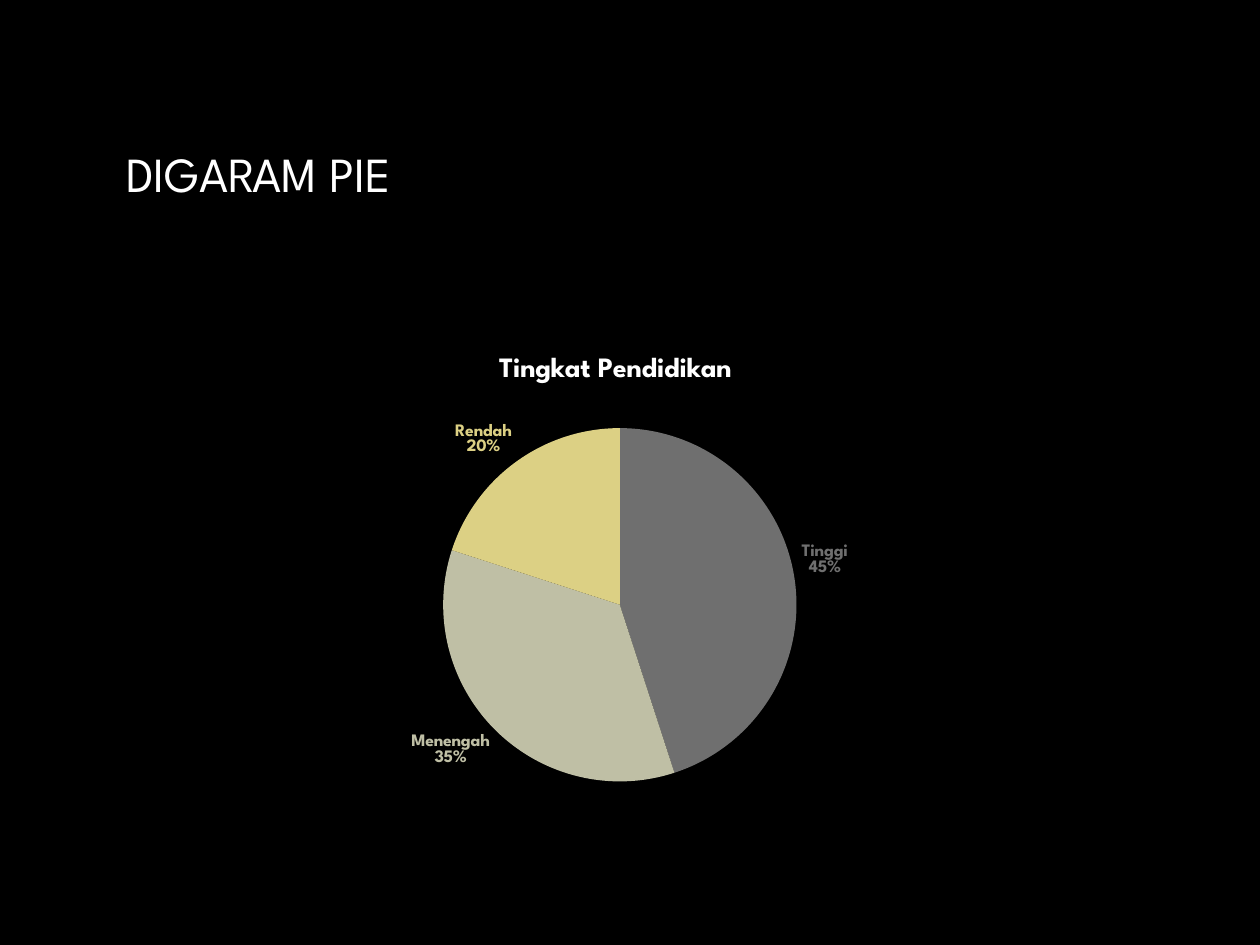
from dataclasses import dataclass

from lxml.etree import SubElement
from pptx import Presentation
from pptx.chart.data import CategoryChartData as ChartData
from pptx.dml.color import RGBColor as RGB
from pptx.enum.chart import XL_CHART_TYPE as ChartType, XL_LABEL_POSITION as LabelPos
from pptx.enum.text import MSO_ANCHOR as Anchor, PP_ALIGN as Align
from pptx.oxml.ns import qn
from pptx.util import Inches, Pt


@dataclass(frozen=True)
class Theme:
    font: str = "League Spartan"
    background: RGB = RGB(0x00, 0x00, 0x00)
    text: RGB = RGB(0xFF, 0xFF, 0xFF)
    text_fade: RGB = RGB(0xBF, 0xBF, 0xBF)
    slices: tuple = (RGB(0x6F, 0x6F, 0x6F), RGB(0xBF, 0xBF, 0xA5), RGB(0xDC, 0xD0, 0x84))
    title_size: Pt = Pt(28)
    chart_title_size: Pt = Pt(16)
    label_size: Pt = Pt(10)


def set_plot_layout(chart, **fractions):
    """Fix the inner plot area at x, y, w, h as fractions of the chart."""
    plot_area = chart.plots[0]._element.getparent()
    layout = plot_area.find(qn("c:layout"))
    if layout is None:
        layout = SubElement(plot_area, qn("c:layout"))
        plot_area.insert(0, layout)
    manual = SubElement(layout, qn("c:manualLayout"))
    settings = {"layoutTarget": "inner", "xMode": "edge", "yMode": "edge", **fractions}
    for tag, value in settings.items():
        SubElement(manual, qn(f"c:{tag}")).set("val", str(value))


def show_name_over_percent(label):
    """Show the category name with the percentage on the line below it."""
    for tag, flag in (("showVal", "0"), ("showCatName", "1"), ("showPercent", "1")):
        label.find(qn(f"c:{tag}")).set("val", flag)
    separator = SubElement(label, qn("c:separator"))
    separator.text = "\n"
    label.find(qn("c:showBubbleSize")).addnext(separator)


class SlideBuilder:
    def __init__(self, presentation, theme):
        self.theme = theme
        self.slide = presentation.slides.add_slide(presentation.slide_layouts[5])
        backdrop = self.slide.background.fill
        backdrop.solid()
        backdrop.fore_color.rgb = theme.background

    def style(self, font, size, color, bold=False):
        font.name, font.size, font.bold = self.theme.font, size, bold
        font.color.rgb = color

    def title(self, text, left, top, width, height):
        title = self.slide.shapes.title
        title.left, title.top = Inches(left), Inches(top)
        title.width, title.height = Inches(width), Inches(height)
        frame = title.text_frame
        frame.text = text
        frame.vertical_anchor = Anchor.MIDDLE
        heading = frame.paragraphs[0]
        heading.alignment = Align.LEFT
        self.style(heading.font, self.theme.title_size, self.theme.text)
        fade = heading.font.fill
        fade.gradient()
        fade.gradient_angle = 270
        for stop, color in zip(fade.gradient_stops, (self.theme.text, self.theme.text_fade)):
            stop.color.rgb = color

    def pie(self, heading, shares, left, top, width, height):
        theme = self.theme
        data = ChartData()
        data.categories = list(shares)
        data.add_series("Series 1", list(shares.values()))
        chart = self.slide.shapes.add_chart(
            ChartType.PIE, Inches(left), Inches(top), Inches(width), Inches(height), data
        ).chart
        self.style(chart.font, theme.label_size, theme.text)
        chart.has_legend = False
        chart.has_title = True
        chart.chart_title.include_in_layout = False
        chart_heading = chart.chart_title.text_frame
        chart_heading.text = heading
        self.style(chart_heading.paragraphs[0].font, theme.chart_title_size, theme.text, bold=True)
        set_plot_layout(chart, x=0.3, y=0.2, w=0.41, h=0.74)

        plot = chart.plots[0]
        plot.vary_by_categories = True
        series = plot.series[0]
        for index, color in enumerate(theme.slices):
            point = series.points[index]
            point.format.fill.solid()
            point.format.fill.fore_color.rgb = color
            point.format.line.fill.background()
            label = point.data_label
            self.style(label.font, theme.label_size, color, bold=True)
            label.position = LabelPos.OUTSIDE_END
            show_name_over_percent(label._dLbl)
        series.data_labels.position = LabelPos.OUTSIDE_END
        show_name_over_percent(series.data_labels._element)


def main():
    presentation = Presentation()
    presentation.slide_width, presentation.slide_height = Inches(10), Inches(7.5)
    builder = SlideBuilder(presentation, Theme())
    builder.title("DIGARAM PIE", 0.9, 0.65, 8.2, 1.44)
    builder.pie(
        "Tingkat Pendidikan",
        {"Tinggi": 45, "Menengah": 35, "Rendah": 20},
        1.38, 2.64, 7.01, 3.79,
    )
    presentation.save("out.pptx")


if __name__ == "__main__":
    main()
